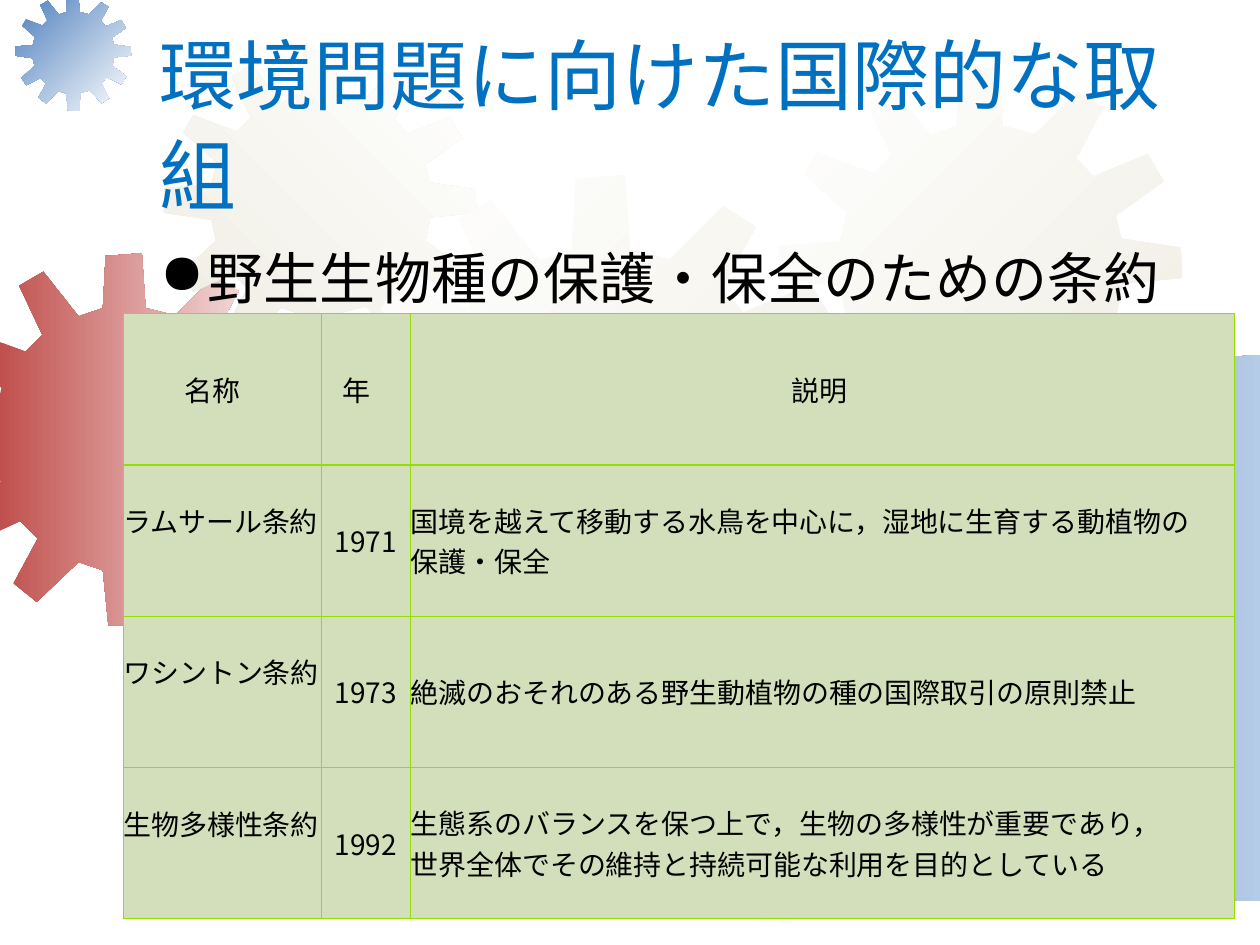
from copy import deepcopy
from dataclasses import dataclass

from lxml.etree import SubElement
from pptx import Presentation
from pptx.dml.color import RGBColor
from pptx.enum.text import MSO_ANCHOR, PP_ALIGN
from pptx.oxml import parse_xml
from pptx.oxml.ns import nsdecls, qn
from pptx.util import Inches, Pt


@dataclass(frozen=True)
class Theme:
    title: str = "0070C0"
    text: str = "000000"
    white: str = "FFFFFF"
    red: str = "C0504D"
    blue: str = "4F81BD"
    cream: str = "EEECE1"
    steel: str = "99ACC3"
    sky: str = "B5CCE8"
    cell: str = "D3DFBB"
    border: str = "95DD00"
    heading_font: str = "Arial"
    table_font: str = "Noto Sans CJK JP"
    title_size: int = 44
    body_size: int = 32
    table_size: int = 16


T = Theme()
WIDTH, HEIGHT = 10, 7.5
GEAR_SIZE = 4.01
GEAR = [
    (2.55, 0.67), (2.23, 0.59), (2.19, 0), (1.8, 0.03), (1.77, 0.59), (1.51, 0.68),
    (1.13, 0.2), (0.87, 0.35), (1.12, 0.88), (0.94, 1.06), (0.38, 0.85), (0.25, 1.07),
    (0.68, 1.45), (0.61, 1.74), (0.01, 1.78), (0, 2.1), (0.61, 2.19), (0.67, 2.46),
    (0.22, 2.87), (0.38, 3.12), (0.88, 2.88), (1.07, 3.07), (0.81, 3.55), (1.06, 3.75),
    (1.51, 3.32), (1.77, 3.41), (1.83, 4), (2.22, 4.01), (2.26, 3.39), (2.59, 3.3),
    (2.99, 3.74), (3.25, 3.58), (2.99, 3.06), (3.16, 2.84), (3.68, 3.09), (3.84, 2.81),
    (3.36, 2.46), (3.42, 2.16), (4.01, 2.1), (4, 1.8), (3.41, 1.71), (3.35, 1.48),
    (3.83, 1.14), (3.67, 0.87), (3.13, 1.09), (2.96, 0.91), (3.23, 0.41), (2.97, 0.25),
]


def trim(points, axis, limit, sign):
    kept = []
    for a, b in zip(points, points[1:] + points[:1]):
        da, db = sign * (limit - a[axis]), sign * (limit - b[axis])
        if da >= 0:
            kept.append(a)
        if da * db < 0:
            t = da / (da - db)
            kept.append(tuple(u + t * (v - u) for u, v in zip(a, b)))
    return kept


def style(p, font, size, color):
    for r in p.runs:
        r.font.name = font
        r.font.size = Pt(size)
        r.font.color.rgb = RGBColor.from_string(color)
        SubElement(r.font._element, qn("a:ea"), typeface=font)


prs = Presentation()
prs.slide_width, prs.slide_height = Inches(WIDTH), Inches(HEIGHT)
slide = prs.slides.add_slide(prs.slide_layouts[6])

gears = [
    (-0.49, 2.01, 2.96, [T.red, T.white], 0),
    (0.12, -0.04, 0.92, [T.blue, T.white], 45),
    (1.3, 0.39, 2.48, [T.cream, T.white], 315),
    (2.77, 1.39, 4.01, [T.white, T.cream], 45),
    (0, 5.25, 3.74, [T.white], 0),
    (4.91, 4.84, 2.48, [T.cream, T.white], 45),
    (6.18, 0.53, 3.2, [T.white, T.cream], 45),
    (7.82, 2.8, 4.36, [T.white, T.steel, T.sky], 0),
]
for left, top, size, colors, angle in gears:
    k = size / GEAR_SIZE
    points = [(left + x * k, top + y * k) for x, y in GEAR]
    for axis, limit, sign in [(0, 0, -1), (0, WIDTH, 1), (1, 0, -1), (1, HEIGHT, 1)]:
        points = trim(points, axis, limit, sign)
    points = [(Inches(x), Inches(y)) for x, y in points]
    builder = slide.shapes.build_freeform(*points[0], scale=1.0)
    builder.add_line_segments(points[1:], close=True)
    s = builder.convert_to_shape()
    s.shadow.inherit = False
    s.line.fill.background()
    if len(colors) == 1:
        s.fill.solid()
        s.fill.fore_color.rgb = RGBColor.from_string(colors[0])
        SubElement(s._element.spPr.find(".//" + qn("a:srgbClr")), qn("a:alpha"), val="50000")
        continue
    s.fill.gradient()
    s.fill.gradient_angle = (360 - angle) % 360
    if len(colors) == 3:
        first = s._element.spPr.find(".//" + qn("a:gs"))
        first.addnext(deepcopy(first))
    for i, (stop, color) in enumerate(zip(s.fill.gradient_stops, colors)):
        stop.position = i / (len(colors) - 1)
        stop.color.rgb = RGBColor.from_string(color)

s = slide.shapes.add_textbox(Inches(1.17), Inches(0.33), Inches(8.64), Inches(1.25))
tf = s.text_frame
tf.word_wrap = True
tf.vertical_anchor = MSO_ANCHOR.MIDDLE
tf.text = "環境問題に向けた国際的な取組"
tf.paragraphs[0].line_spacing = 1.08
style(tf.paragraphs[0], T.heading_font, T.title_size, T.title)

s = slide.shapes.add_textbox(Inches(1.17), Inches(1.83), Inches(8.5), Inches(4.5))
tf = s.text_frame
tf.word_wrap = True
tf.margin_top = Inches(0.1)
tf.text = "野生生物種の保護・保全のための条約"
p = tf.paragraphs[0]
pPr = p._p.get_or_add_pPr()
pPr.set("marL", str(Inches(0.38)))
pPr.set("indent", str(Inches(-0.38)))
SubElement(pPr, qn("a:buChar"), char="●")
style(p, T.heading_font, T.body_size, T.text)

rows = [
    ["名称", "年", "説明"],
    ["ラムサール条約", "1971", "国境を越えて移動する水鳥を中心に，湿地に生育する動植物の\n保護・保全"],
    ["ワシントン条約", "1973", "絶滅のおそれのある野生動植物の種の国際取引の原則禁止"],
    ["生物多様性条約", "1992", "生態系のバランスを保つ上で，生物の多様性が重要であり，\n世界全体でその維持と持続可能な利用を目的としている"],
]
table = slide.shapes.add_table(
    len(rows), 3, Inches(0.98), Inches(2.49), Inches(8.82), Inches(4.8)
).table
table.first_row = table.horz_banding = False
for column, width in zip(table.columns, [1.57, 0.71, 6.54]):
    column.width = Inches(width)
for i, row in enumerate(rows):
    table.rows[i].height = Inches(1.2)
    for j, text in enumerate(row):
        cell = table.cell(i, j)
        cell.margin_left = cell.margin_top = 0
        cell.margin_right = Inches([0.15, 0.15, 0.05][j]) if i == 0 else 0
        cell.margin_bottom = Inches(0.32) if i and j == 0 else 0
        cell.vertical_anchor = MSO_ANCHOR.MIDDLE
        cell.fill.solid()
        cell.fill.fore_color.rgb = RGBColor.from_string(T.cell)
        cell.text_frame.text = text
        for p in cell.text_frame.paragraphs:
            p.alignment = PP_ALIGN.CENTER if i == 0 or j == 1 else PP_ALIGN.LEFT
            style(p, T.table_font, T.table_size, T.text)
        for n, side in enumerate("LRTB"):
            cell._tc.tcPr.insert(n, parse_xml(
                f'<a:ln{side} {nsdecls("a")} w="{Pt(0.75)}"><a:solidFill>'
                f'<a:srgbClr val="{T.border}"/></a:solidFill></a:ln{side}>'
            ))

prs.save("out.pptx")
